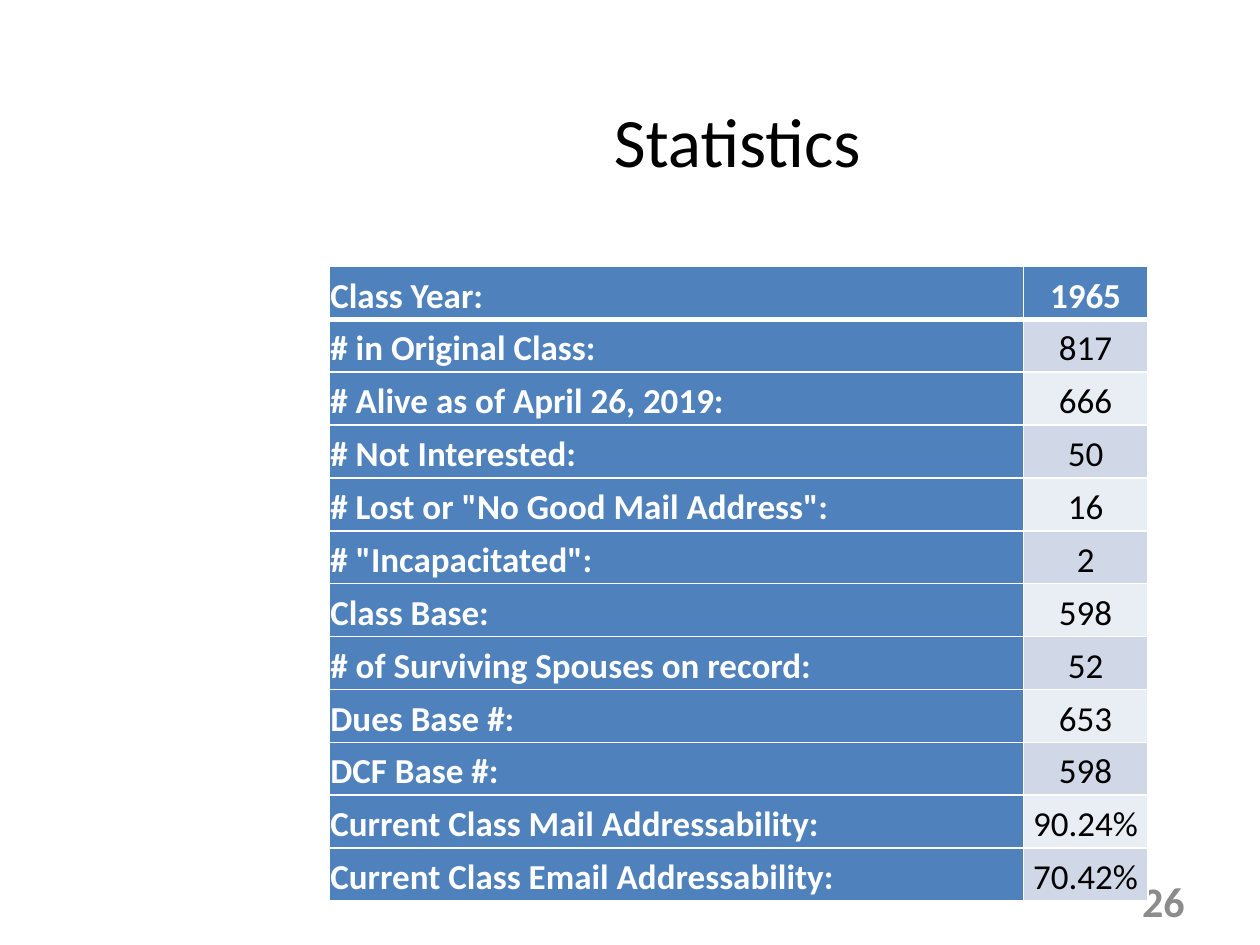
from lxml.etree import SubElement
from pptx import Presentation
from pptx.dml.color import RGBColor
from pptx.enum.text import MSO_ANCHOR, PP_ALIGN
from pptx.oxml.ns import qn
from pptx.util import Cm, Pt

COLORS = {
    "accent": "4F81BD",
    "band_dark": "D0D8E8",
    "band_light": "E9EDF4",
    "white": "FFFFFF",
    "black": "000000",
    "gray": "8C8C8C",
}
FONT = "Calibri"
STATISTICS = [
    ("Class Year:", "1965"),
    ("# in Original Class:", "817"),
    ("# Alive as of April 26, 2019:", "666"),
    ("# Not Interested:", "50"),
    ('# Lost or "No Good Mail Address":', "16"),
    ('# "Incapacitated":', "2"),
    ("Class Base:", "598"),
    ("# of Surviving Spouses on record:", "52"),
    ("Dues Base #:", "653"),
    ("DCF Base #:", "598"),
    ("Current Class Mail Addressability:", "90.24%"),
    ("Current Class Email Addressability:", "70.42%"),
]


def rgb(name):
    return RGBColor.from_string(COLORS[name])


def style_paragraph(p, size, color, bold, align):
    p.alignment = align
    p.font.name = FONT
    p.font.size = Pt(size)
    p.font.bold = bold
    p.font.color.rgb = rgb(color)


def add_text(s, box, text, size, color, bold, align):
    tf = s.shapes.add_textbox(*map(Cm, box)).text_frame
    tf.word_wrap = True
    tf.vertical_anchor = MSO_ANCHOR.MIDDLE
    p = tf.paragraphs[0]
    p.text = text
    style_paragraph(p, size, color, bold, align)


def add_borders(cell, widths):
    tc_pr = cell._tc.get_or_add_tcPr()
    for side, width in zip("LRTB", widths):
        ln = SubElement(tc_pr, qn(f"a:ln{side}"), w=str(Pt(width)))
        fill = SubElement(ln, qn("a:solidFill"))
        SubElement(fill, qn("a:srgbClr"), val=COLORS["white"])


def fill_cell(cell, text, row, col):
    heading = row == 0 or col == 0
    add_borders(cell, (1, 1, 3 if row == 1 else 1, 3 if row == 0 else 1))
    cell.fill.solid()
    band = "band_dark" if row % 2 else "band_light"
    cell.fill.fore_color.rgb = rgb("accent" if heading else band)
    cell.vertical_anchor = MSO_ANCHOR.MIDDLE
    cell.margin_left = cell.margin_right = Cm(0.03)
    cell.margin_top = cell.margin_bottom = Cm(0.03)
    p = cell.text_frame.paragraphs[0]
    p.text = text
    p.line_spacing = 1.15
    style_paragraph(p, 20, "white" if heading else "black", heading,
                    PP_ALIGN.CENTER if col else PP_ALIGN.LEFT)


def add_statistics_table(s, box):
    left, top, width, height = map(Cm, box)
    rows = len(STATISTICS)
    table = s.shapes.add_table(rows, 2, left, top, width, height).table
    value_width = Cm(2.51)
    table.columns[0].width = width - value_width
    table.columns[1].width = value_width
    for r, values in enumerate(STATISTICS):
        table.rows[r].height = height // rows
        for c, text in enumerate(values):
            fill_cell(table.cell(r, c), text, r, c)


def main():
    prs = Presentation()
    prs.slide_width, prs.slide_height = Cm(25.4), Cm(19.05)
    s = prs.slides.add_slide(prs.slide_layouts[6])
    add_text(s, (6.4, 1.55, 16.92, 2.54), "Statistics", 39.6, "black", False,
             PP_ALIGN.CENTER)
    add_text(s, (18.2, 17.65, 5.93, 1.01), "26", 24, "gray", True,
             PP_ALIGN.RIGHT)
    add_statistics_table(s, (6.63, 5.37, 16.51, 12.8))
    prs.save("out.pptx")


if __name__ == "__main__":
    main()
